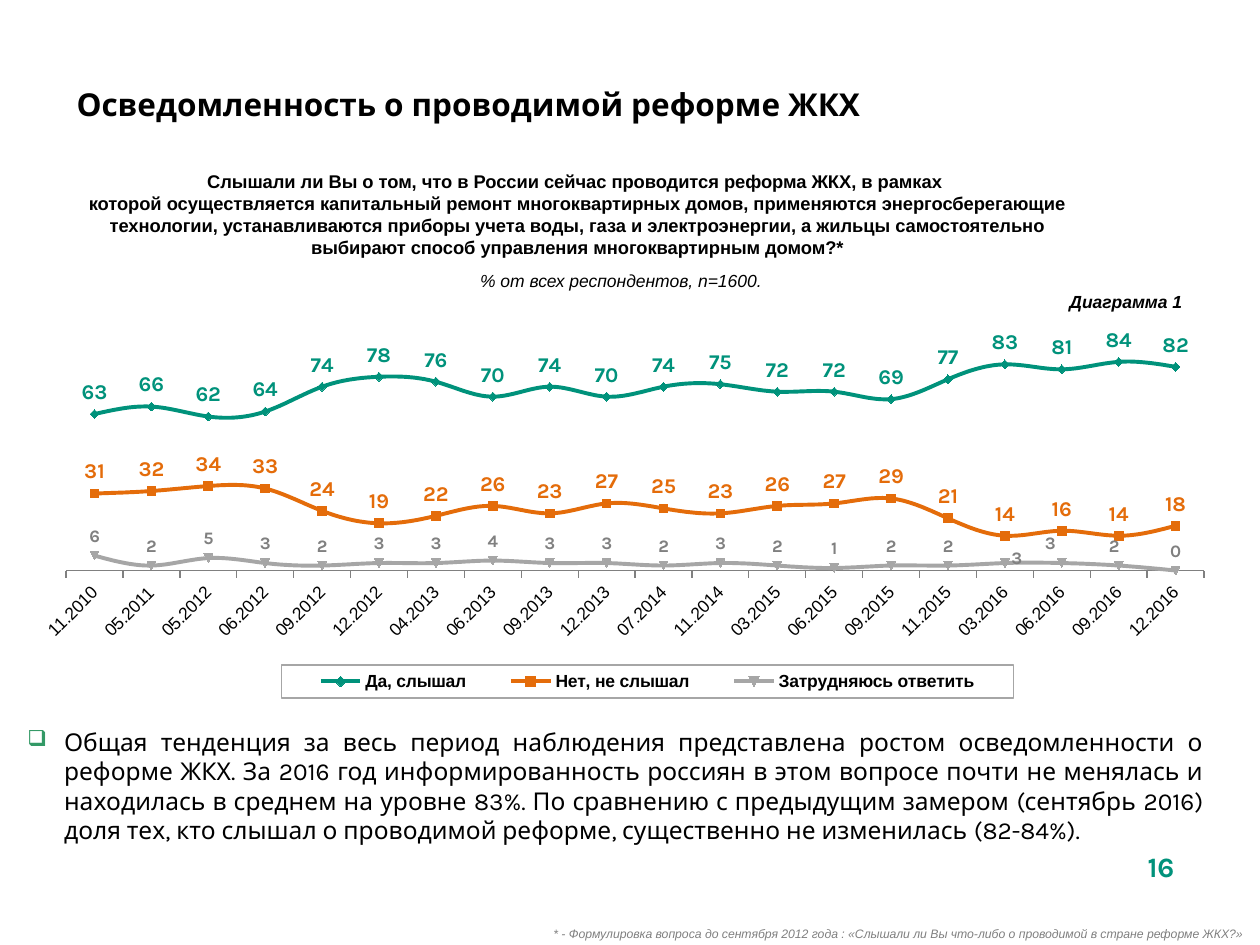
from lxml import etree
from pptx import Presentation
from pptx.chart.data import CategoryChartData
from pptx.dml.color import RGBColor
from pptx.enum import chart as ch, text as tx
from pptx.oxml import parse_xml
from pptx.oxml.ns import nsdecls, qn
from pptx.util import Inches, Pt

BLACK = RGBColor(0x00, 0x00, 0x00)
GREEN = RGBColor(0x00, 0x92, 0x7B)
ORANGE = RGBColor(0xE4, 0x6C, 0x0A)
SILVER = RGBColor(0xA6, 0xA6, 0xA6)
GRAY = RGBColor(0x80, 0x80, 0x80)
LEFT, CENTER, RIGHT, JUSTIFY = (
    tx.PP_ALIGN.LEFT, tx.PP_ALIGN.CENTER, tx.PP_ALIGN.RIGHT, tx.PP_ALIGN.JUSTIFY)

prs = Presentation()
prs.slide_width, prs.slide_height = Inches(10), Inches(7.5)
slide = prs.slides.add_slide(prs.slide_layouts[6])


def style(font, size, color, name="Karla", bold=False, italic=False):
    font.size, font.name, font.bold, font.italic = Pt(size), name, bold, italic
    font.color.rgb = color


def add_text(box, words, align, size, color=BLACK, name="Karla", bold=False, italic=False):
    frame = slide.shapes.add_textbox(*[Inches(v) for v in box]).text_frame
    frame.word_wrap = True
    frame.text = words
    frame.paragraphs[0].alignment = align
    for run in frame.paragraphs[0].runs:
        style(run.font, size, color, name, bold, italic)
    return frame


answers = [
    ("Да, слышал", GREEN, GREEN, 12, ch.XL_MARKER_STYLE.DIAMOND,
     [63, 66, 62, 64, 74, 78, 76, 70, 74, 70, 74, 75, 72, 72, 69, 77, 83, 81, 84, 82]),
    ("Нет, не слышал", ORANGE, ORANGE, 12, ch.XL_MARKER_STYLE.SQUARE,
     [31, 32, 34, 33, 24, 19, 22, 26, 23, 27, 25, 23, 26, 27, 29, 21, 14, 16, 14, 18]),
    ("Затрудняюсь ответить", SILVER, GRAY, 10, ch.XL_MARKER_STYLE.AUTOMATIC,
     [6, 2, 5, 3, 2, 3, 3, 4, 3, 3, 2, 3, 2, 1, 2, 2, 3, 3, 2, 0]),
]
polls = CategoryChartData(number_format="0")
polls.categories = [
    "11.2010", "05.2011", "05.2012", "06.2012", "09.2012", "12.2012", "04.2013",
    "06.2013", "09.2013", "12.2013", "07.2014", "11.2014", "03.2015", "06.2015",
    "09.2015", "11.2015", "03.2016", "06.2016", "09.2016", "12.2016"]
for name, _, _, _, _, shares in answers:
    polls.add_series(name, shares)
awareness = slide.shapes.add_chart(
    ch.XL_CHART_TYPE.LINE_MARKERS, Inches(0.3), Inches(1.86), Inches(9.35), Inches(3.77), polls).chart
awareness.has_title = False
style(awareness.font, 10, BLACK)

dates = awareness.category_axis
style(dates.tick_labels.font, 10, BLACK, "Arial")
dates._element.find(qn("c:txPr")).find(qn("a:bodyPr")).set("rot", "-2700000")
dates.format.line.color.rgb = GRAY
dates.major_tick_mark = ch.XL_TICK_MARK.OUTSIDE
dates.has_major_gridlines = False
percent = awareness.value_axis
percent.minimum_scale, percent.maximum_scale = 0, 100
percent.has_major_gridlines = False
percent.visible = False

awareness.has_legend = True
legend = awareness.legend
legend.position = ch.XL_LEGEND_POSITION.BOTTOM
legend.include_in_layout = False
style(legend.font, 10, BLACK, "Arial", True)
legend._element.find(qn("c:txPr")).addprevious(parse_xml(
    f'<c:spPr {nsdecls("c", "a")}><a:ln w="9525"><a:solidFill>'
    f'<a:srgbClr val="{SILVER}"/></a:solidFill></a:ln></c:spPr>'))

plot_area = awareness._chartSpace.chart.plotArea
for parent, extent, inner in ((plot_area, (0.024, 0.185, 0.966, 0.523), True),
                              (legend._element, (0.207, 0.907, 0.621, 0.069), False)):
    for old in parent.findall(qn("c:layout")):
        parent.remove(old)
    layout = parse_xml(f'<c:layout {nsdecls("c")}><c:manualLayout/></c:layout>')
    if inner:
        etree.SubElement(layout[0], qn("c:layoutTarget")).set("val", "inner")
    for key in ("xMode", "yMode"):
        etree.SubElement(layout[0], qn(f"c:{key}")).set("val", "edge")
    for key, share in zip("xywh", extent):
        etree.SubElement(layout[0], qn(f"c:{key}")).set("val", str(share))
    parent.insert(0 if inner else 1, layout)

for line, (_, color, label_color, label_size, symbol, _) in zip(awareness.plots[0].series, answers):
    line.smooth = True
    line.format.line.color.rgb = color
    line.format.line.width = Pt(2.25)
    line.marker.style, line.marker.size = symbol, 5
    line.marker.format.fill.solid()
    line.marker.format.fill.fore_color.rgb = color
    line.marker.format.line.color.rgb = color
    labels = line.data_labels
    labels.show_value = True
    labels.number_format, labels.number_format_is_linked = "0", False
    labels.position = ch.XL_LABEL_POSITION.ABOVE
    style(labels.font, label_size, label_color, bold=True)

for index, dx, dy in ((16, 0.01, 0.03), (17, -0.01, 0), (18, -0.004, 0)):
    label = line.points[index].data_label
    style(label.font, 10, GRAY, bold=True)
    label.position = ch.XL_LABEL_POSITION.ABOVE
    label._dLbl.insert(1, parse_xml(
        f'<c:layout {nsdecls("c")}><c:manualLayout><c:x val="{dx}"/><c:y val="{dy}"/>'
        '</c:manualLayout></c:layout>'))

heading = add_text((0.51, 0.44, 6.83, 0.71), "Осведомленность о проводимой реформе ЖКХ",
                   LEFT, 18, bold=True)
heading.vertical_anchor = tx.MSO_ANCHOR.MIDDLE
heading.paragraphs[0].line_spacing = 1.2

question = add_text(
    (0.51, 1.29, 8.15, 0.81),
    "Слышали ли Вы о том, что в России сейчас проводится реформа ЖКХ, в рамках \v"
    "которой осуществляется капитальный ремонт многоквартирных домов, применяются "
    "энергосберегающие технологии, устанавливаются приборы учета воды, газа и "
    "электроэнергии, а жильцы самостоятельно выбирают способ управления "
    "многоквартирным домом?*", CENTER, 10.5, name="Arial", bold=True)
question.vertical_anchor = tx.MSO_ANCHOR.BOTTOM

trend = add_text(
    (0.12, 5.72, 9.53, 1.02),
    "Общая тенденция за весь период наблюдения представлена ростом осведомленности о "
    "реформе ЖКХ. За 2016 год информированность россиян в этом вопросе почти не менялась и "
    "находилась в среднем на уровне 83%. По сравнению с предыдущим замером (сентябрь 2016) "
    "доля тех, кто слышал о проводимой реформе, существенно не изменилась (82-84%).",
    JUSTIFY, 14)
bullet = trend.paragraphs[0]._p.get_or_add_pPr()
bullet.set("marL", str(Inches(0.29)))
bullet.set("indent", str(Inches(-0.29)))
for xml in ('<a:buClr {}><a:srgbClr val="339966"/></a:buClr>',
            '<a:buSzPct {} val="90000"/>', '<a:buChar {} char="❑"/>'):
    bullet.append(parse_xml(xml.format(nsdecls("a"))))

add_text((0.51, 7.3, 9.45, 0.22),
         "* - Формулировка вопроса до сентября 2012 года : «Слышали ли Вы что-либо о "
         "проводимой в стране реформе ЖКХ?»", RIGHT, 7, GRAY, "Arial", italic=True)
add_text((6.81, 2.26, 2.67, 0.27), "Диаграмма 1", RIGHT, 10, name="Arial", bold=True, italic=True)
sample = add_text((3.67, 2.09, 2.51, 0.27), "% от всех респондентов, n=1600. ",
                  RIGHT, 10, name="Arial", italic=True)
sample.word_wrap = False
add_text((8.78, 6.69, 0.87, 0.52), "16", CENTER, 16, GREEN, bold=True)

prs.save("out.pptx")
